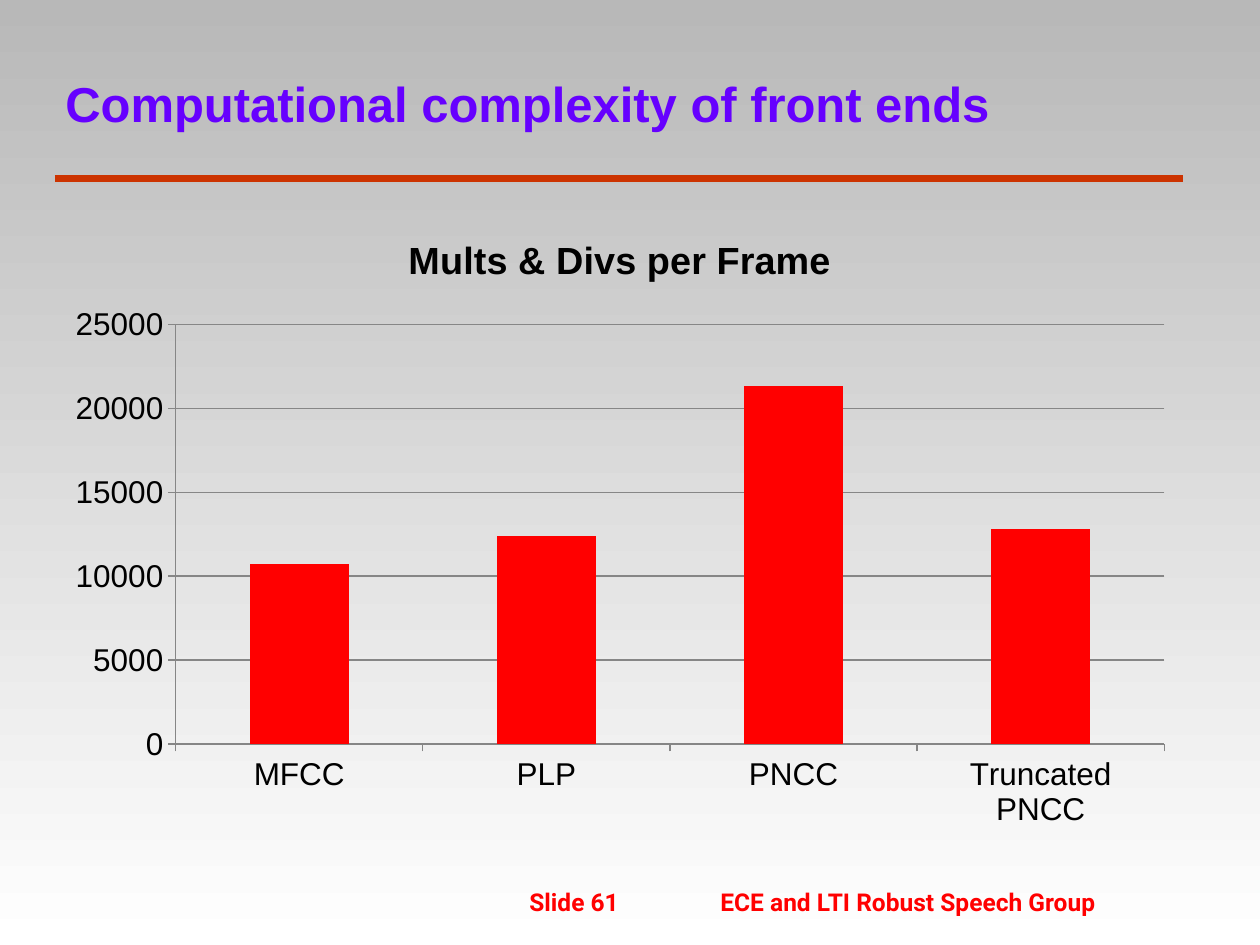
import pptx
import pptx.chart.data
import pptx.dml.color
import pptx.enum.chart
import pptx.enum.shapes
import pptx.enum.text
import pptx.oxml
import pptx.oxml.ns
import pptx.util
from lxml import etree

RGBColor = pptx.dml.color.RGBColor
PURPLE = RGBColor(0x66, 0x00, 0xFF)
RUST = RGBColor(0xCC, 0x33, 0x00)
RED = RGBColor(0xFF, 0x00, 0x00)
BLACK = RGBColor(0x00, 0x00, 0x00)
AXIS_GRAY = RGBColor(0x86, 0x86, 0x86)
TOP_GRAY = RGBColor(0xB8, 0xB8, 0xB8)
WHITE = RGBColor(0xFF, 0xFF, 0xFF)

PX_PER_INCH = 126


def px(*lengths):
    """Turn px lengths into a list of EMU."""
    return [round(n * 914400 / PX_PER_INCH) for n in lengths]


def style_font(font, size, color=BLACK, bold=False, name="Arial"):
    font.name = name
    font.size = pptx.util.Pt(size)
    font.bold = bold
    font.color.rgb = color


def write_text(frame, text, tabs=(), **style):
    """Fill the frame's first paragraph; tabs are px from the text edge."""
    paragraph = frame.paragraphs[0]
    paragraph.text = ""
    if tabs:
        properties = paragraph._p.get_or_add_pPr()
        tab_list = etree.SubElement(properties, pptx.oxml.ns.qn("a:tabLst"))
        for position in px(*tabs):
            etree.SubElement(tab_list, pptx.oxml.ns.qn("a:tab"),
                             pos=str(position), algn="l")
    run = paragraph.add_run()
    run.text = text
    style_font(run.font, **style)


class SlideBuilder:
    def __init__(self, slide):
        self.slide = slide

    def background(self, top, bottom):
        fill = self.slide.background.fill
        fill.gradient()
        fill.gradient_angle = 270
        for stop, color, position in zip(fill.gradient_stops, (top, bottom), (0, 1)):
            stop.color.rgb = color
            stop.position = position

    def rule(self, left, right, y, color, width):
        rule = self.slide.shapes.add_connector(
            pptx.enum.shapes.MSO_CONNECTOR.STRAIGHT, *px(left, y, right, y))
        rule.line.color.rgb = color
        rule.line.width = pptx.util.Pt(width)
        etree.SubElement(rule._element.spPr, pptx.oxml.ns.qn("a:effectLst"))

    def text(self, box, text, inset_top=0, anchor="TOP", **style):
        frame = self.slide.shapes.add_textbox(*px(*box)).text_frame
        frame.word_wrap = True
        frame.vertical_anchor = pptx.enum.text.MSO_ANCHOR[anchor]
        frame.margin_top, frame.margin_bottom = px(inset_top, 0)
        write_text(frame, text, **style)

    def column_chart(self, box, title, values, color):
        data = pptx.chart.data.CategoryChartData()
        data.categories = list(values)
        data.add_series(title, list(values.values()))
        chart = self.slide.shapes.add_chart(
            pptx.enum.chart.XL_CHART_TYPE.COLUMN_CLUSTERED, *px(*box), data).chart
        style_font(chart.font, 18)
        chart.has_legend = False
        chart.has_title = True
        chart.chart_title.include_in_layout = False
        write_text(chart.chart_title.text_frame, title, size=21.6, bold=True)

        plot = chart.plots[0]
        plot.gap_width = 150
        plot.vary_by_categories = False
        bars = plot.series[0].format.fill
        bars.solid()
        bars.fore_color.rgb = color

        chart.value_axis.has_major_gridlines = True
        chart.value_axis.minimum_scale = 0
        chart.value_axis.maximum_scale = 25000
        chart.value_axis.major_unit = 5000
        for axis in (chart.category_axis, chart.value_axis):
            axis.major_tick_mark = pptx.enum.chart.XL_TICK_MARK.OUTSIDE
            axis.format.line.color.rgb = AXIS_GRAY
        chart.value_axis.major_gridlines.format.line.color.rgb = AXIS_GRAY


def main():
    deck = pptx.Presentation()
    deck.slide_width, deck.slide_height = px(1260, 945)
    page = SlideBuilder(deck.slides.add_slide(deck.slide_layouts[6]))

    page.background(TOP_GRAY, WHITE)
    page.rule(55, 1183, 179, RUST, 4)
    page.text((179, 862, 1018, 63), "\tSlide 61\tECE and LTI Robust Speech Group",
              inset_top=25, tabs=(338, 529), size=14, color=RED, bold=True,
              name="Roboto")
    page.text((53, 48, 1134, 84), "Computational complexity of front ends",
              anchor="BOTTOM", size=28, color=PURPLE, bold=True)
    page.column_chart(
        (53, 210, 1134, 630), "Mults & Divs per Frame",
        {"MFCC": 10700, "PLP": 12400, "PNCC": 21300, "Truncated PNCC": 12800}, RED)

    deck.save("out.pptx")


if __name__ == "__main__":
    main()
